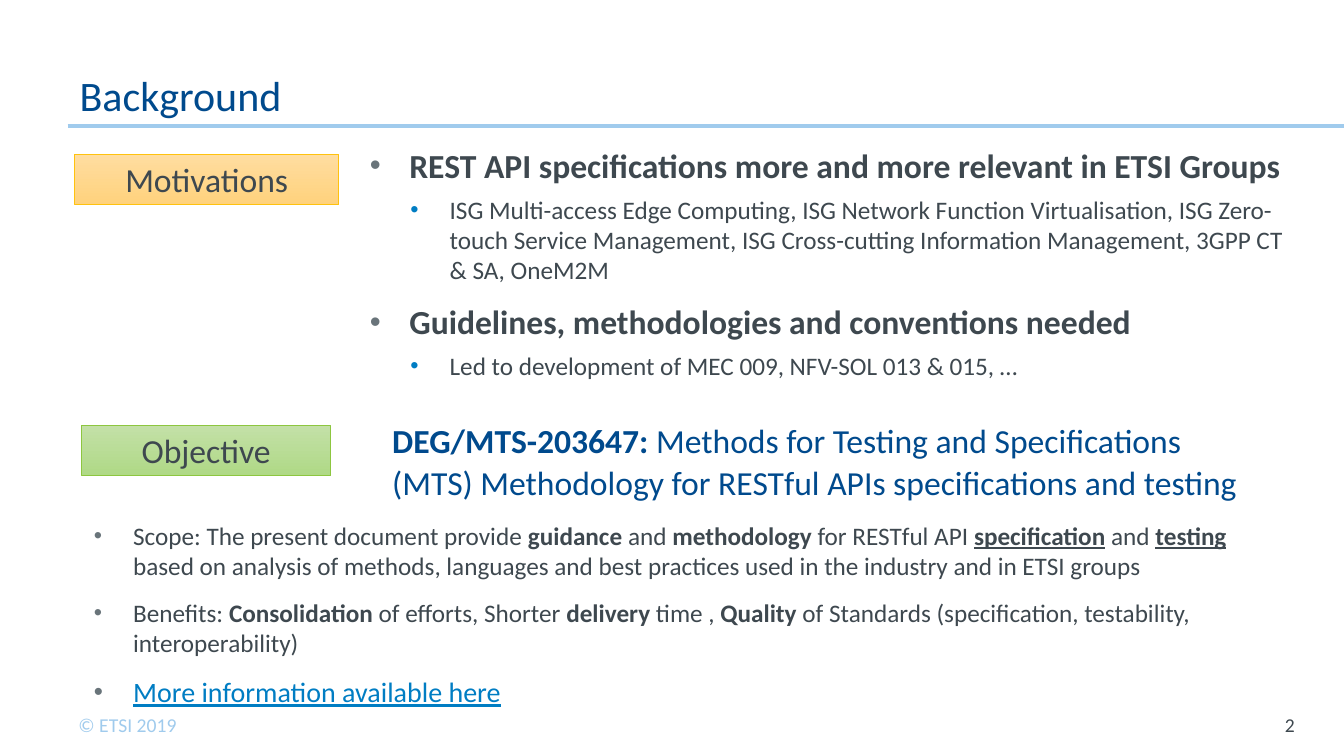
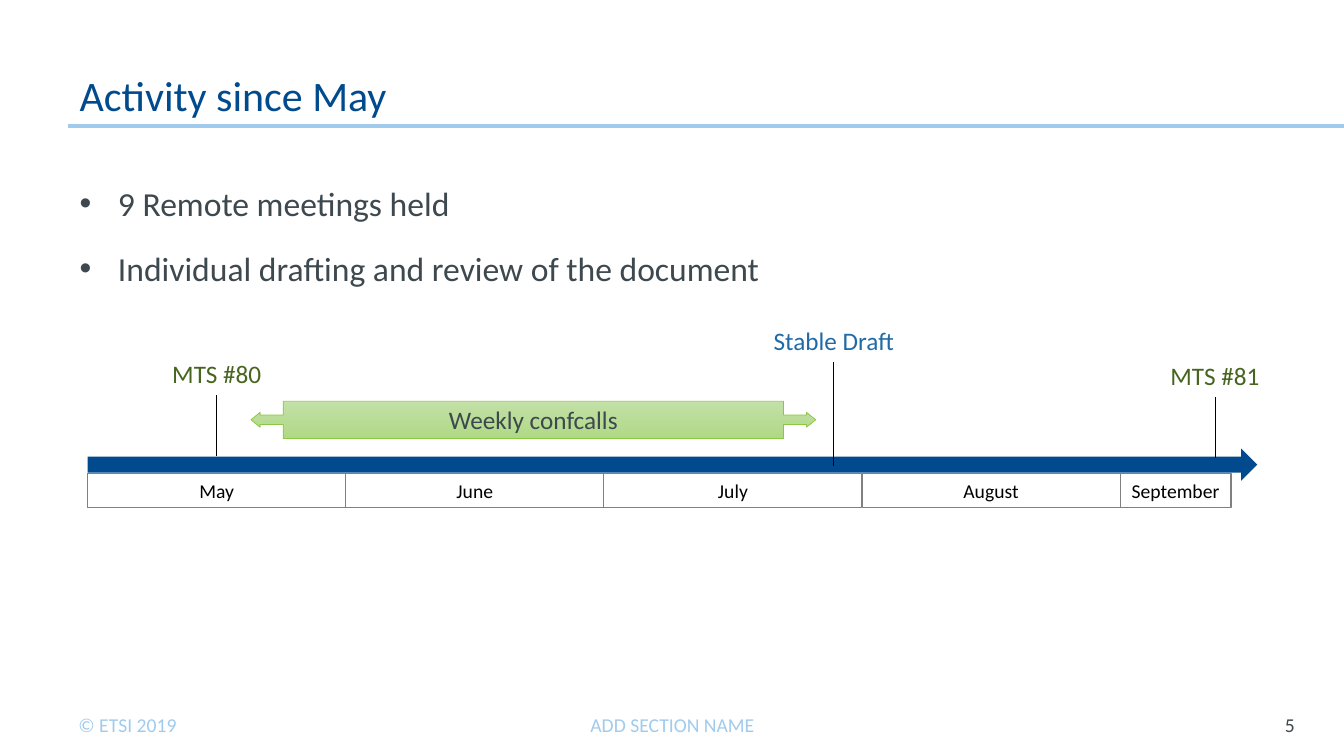
from lxml import etree
from pptx import Presentation
from pptx.dml.color import RGBColor
from pptx.enum.shapes import MSO_CONNECTOR as CONNECTOR, MSO_SHAPE as SHAPE
from pptx.enum.text import MSO_ANCHOR as ANCHOR, MSO_AUTO_SIZE as AUTO_SIZE, PP_ALIGN as ALIGN
from pptx.oxml.ns import qn
from pptx.util import Inches, Pt

COLORS = {
    "navy": "004A8D", "sky": "A0CBED", "text": "3E484F", "blue": "007DC3",
    "bullet": "69747A", "black": "000000", "grey": "808080",
    "draft": "206BA7", "meeting": "47651E",
    "green_top": "C3E0A7", "green_bottom": "AFD986", "green_line": "8DC640",
    "orange_top": "FFDDA0", "orange_bottom": "FFD27D", "orange_line": "FFC20E",
}
RGB = {name: RGBColor.from_string(value) for name, value in COLORS.items()}
FONT = "Calibri"
WIDE_INSETS = (0.12, 0.06, 0.12, 0.06)
BOLD = {"bold": True}
KEYWORD = {"bold": True, "underline": True}

# Paragraph styles: bullet is (left indent, hanging, colour, size in percent)
TOPIC = {"size": 24, "bold": True, "before": 12, "bullet": (0.39, 0.39, "bullet", 93)}
DETAIL = {"size": 18, "before": 6, "bullet": (0.79, 0.39, "blue", 93)}
POINT = {"size": 18, "before": 12, "bullet": (0.39, 0.39, "bullet", 93)}
LINK = {**POINT, "size": 20, "color": "blue", "underline": True}
ACTIVITY = {"size": 24, "before": 18, "bullet": (0.38, 0.38, "text", 100)}
HEADING = {"size": 24, "color": "navy", "line": 30}
TITLE = {"size": 30, "color": "navy", "line": 30}
FOOTER = {"size": 14, "color": "sky"}


def write(shape, paragraphs, anchor=ANCHOR.TOP, insets=(0.1, 0.05, 0.1, 0.05)):
    """Fill a shape with (style, runs) paragraphs; a run is (text, font changes)."""
    frame = shape.text_frame
    frame_format = {"word_wrap": True, "auto_size": AUTO_SIZE.NONE, "vertical_anchor": anchor}
    for side, inset in zip(("left", "top", "right", "bottom"), insets):
        frame_format[f"margin_{side}"] = Inches(inset)
    for name, value in frame_format.items():
        setattr(frame, name, value)

    for index, (style, runs) in enumerate(paragraphs):
        paragraph = frame.add_paragraph() if index else frame.paragraphs[0]
        if "bullet" in style:
            left, hanging, color, percent = style["bullet"]
            properties = paragraph._p.get_or_add_pPr()
            properties.set("marL", str(Inches(left)))
            properties.set("indent", str(-Inches(hanging)))
            bullet_color = etree.SubElement(properties, qn("a:buClr"))
            etree.SubElement(bullet_color, qn("a:srgbClr"), val=COLORS[color])
            etree.SubElement(properties, qn("a:buSzPct"), val=str(percent * 1000))
            etree.SubElement(properties, qn("a:buFont"), typeface="Arial")
            etree.SubElement(properties, qn("a:buChar"), char="•")
        paragraph.alignment = style.get("align", ALIGN.LEFT)
        paragraph.space_before = Pt(style.get("before", 0) if index else 0)
        if "line" in style:
            paragraph.line_spacing = Pt(style["line"])
        for text, changes in runs:
            run = paragraph.add_run()
            run.text = text
            run_format = {"name": FONT, "size": Pt(style["size"]),
                          "bold": style.get("bold", False),
                          "underline": style.get("underline", False), **changes}
            for name, value in run_format.items():
                setattr(run.font, name, value)
            run.font.color.rgb = RGB[style.get("color", "text")]


def add_line(slide, start, end, color, width):
    line = slide.shapes.add_connector(CONNECTOR.STRAIGHT, *map(Inches, start + end))
    line.line.color.rgb = RGB[color]
    line.line.width = Pt(width)
    etree.SubElement(line._element.spPr, qn("a:effectLst"))


presentation = Presentation()
presentation.slide_width = Inches(13.33)
presentation.slide_height = Inches(7.5)
title_only = presentation.slide_layouts[5]

# Title, rule and footer
slides = []
for title_text, number in (("Background", "2"), ("Activity since May", "5")):
    slide = presentation.slides.add_slide(title_only)
    title = slide.shapes.title
    for name, value in zip(("left", "top", "width", "height"), (0.67, 0.3, 10.42, 0.95)):
        setattr(title, name, Inches(value))
    write(title, [(TITLE, [(title_text, {})])], ANCHOR.BOTTOM, WIDE_INSETS)
    add_line(slide, (0.67, 1.25), (13.33, 1.25), "sky", 2.25)
    copyright_box = slide.shapes.add_textbox(*map(Inches, (0.68, 7.02, 1.34, 0.34)))
    write(copyright_box, [(FOOTER, [("© ETSI 2019", {})])])
    number_box = slide.shapes.add_textbox(*map(Inches, (12.25, 6.99, 0.69, 0.4)))
    number_style = {"size": 14, "align": ALIGN.RIGHT}
    write(number_box, [(number_style, [(number, {})])], ANCHOR.MIDDLE, (0, 0.05, 0.1, 0.05))
    slides.append(slide)
background, activity = slides

# Text blocks
motivations = [
    (TOPIC, [("REST API specifications more and more relevant in ETSI Groups", {})]),
    (DETAIL, [("ISG Multi-access Edge Computing, ISG Network Function Virtualisation, "
               "ISG Zero-touch Service Management, ISG Cross-cutting Information "
               "Management, 3GPP CT & SA, OneM2M", {})]),
    (TOPIC, [("Guidelines, methodologies and conventions needed", {})]),
    (DETAIL, [("Led to development of MEC 009, NFV-SOL 013 & 015, …", {})]),
]
objective = [
    (HEADING, [("DEG/MTS-203647: ", BOLD),
               ("Methods for Testing and Specifications (MTS) Methodology for RESTful "
                "APIs specifications and testing", {})]),
]
scope = [
    (POINT, [("Scope: The present document provide ", {}), ("guidance", BOLD),
             (" and ", {}), ("methodology", BOLD), (" for RESTful API ", {}),
             ("specification", KEYWORD), (" and ", {}), ("testing", KEYWORD),
             (" based on analysis of methods, languages and best practices used in "
              "the industry and in ETSI groups", {})]),
    (POINT, [("Benefits: ", {}), ("Consolidation", BOLD), (" of efforts, Shorter ", {}),
             ("delivery", BOLD), (" time , ", {}), ("Quality", BOLD),
             (" of Standards (specification, testability, interoperability)", {})]),
    (LINK, [("More information available here", {})]),
]
activities = [
    (ACTIVITY, [("9 Remote meetings held", {})]),
    (ACTIVITY, [("Individual drafting and review of the document", {})]),
]
section = [({**FOOTER, "align": ALIGN.CENTER}, [("ADD SECTION NAME", {})])]
for slide, place, paragraphs, anchor in (
    (background, (3.55, 1.38, 9.4, 2.64), motivations, ANCHOR.TOP),
    (background, (3.77, 4.1, 8.94, 0.94), objective, ANCHOR.BOTTOM),
    (background, (0.81, 5.1, 11.91, 1.97), scope, ANCHOR.TOP),
    (activity, (0.67, 1.75, 12.28, 1.3), activities, ANCHOR.TOP),
    (activity, (4.42, 6.99, 4.5, 0.4), section, ANCHOR.MIDDLE),
):
    text_box = slide.shapes.add_textbox(*map(Inches, place))
    write(text_box, paragraphs, anchor, WIDE_INSETS)

# Shaded labels
for slide, kind, place, hue, text, size in (
    (background, SHAPE.RECTANGLE, (0.74, 1.53, 2.62, 0.5), "orange", "Motivations", 24),
    (background, SHAPE.RECTANGLE, (0.81, 4.22, 2.47, 0.5), "green", "Objective", 24),
    (activity, SHAPE.LEFT_RIGHT_ARROW_CALLOUT, (2.49, 3.98, 5.6, 0.37), "green",
     "Weekly confcalls", 18),
):
    label = slide.shapes.add_shape(kind, *map(Inches, place))
    label.shadow.inherit = False
    label.fill.gradient()
    label.fill.gradient_angle = 270
    for stop, edge in zip(label.fill.gradient_stops, ("top", "bottom")):
        stop.color.rgb = RGB[f"{hue}_{edge}"]
    label.line.color.rgb = RGB[f"{hue}_line"]
    label.line.width = Pt(0.5)
    if kind == SHAPE.LEFT_RIGHT_ARROW_CALLOUT:
        for index, adjustment in enumerate((0.25, 0.196, 0.242, 0.886)):
            label.adjustments[index] = adjustment
    write(label, [({"size": size, "align": ALIGN.CENTER}, [(text, {})])], ANCHOR.MIDDLE)

# Timeline
time_arrow = activity.shapes.add_shape(
    SHAPE.RIGHT_ARROW, *map(Inches, (0.87, 4.45, 11.6, 0.32)))
time_arrow.shadow.inherit = False
time_arrow.fill.solid()
time_arrow.fill.fore_color.rgb = RGB["navy"]
time_arrow.line.fill.background()

MONTH_WIDTH = 2.56
month_style = {"size": 14, "color": "black", "align": ALIGN.CENTER}
for index, month in enumerate(("May", "June", "July", "August", "September")):
    width = 1.1 if month == "September" else MONTH_WIDTH
    month_box = activity.shapes.add_shape(
        SHAPE.RECTANGLE, *map(Inches, (0.87 + index * MONTH_WIDTH, 4.7, width, 0.34)))
    month_box.shadow.inherit = False
    month_box.fill.background()
    month_box.line.color.rgb = RGB["grey"]
    month_box.line.width = Pt(0.75)
    write(month_box, [(month_style, [(month, {})])])

for text, center, top, width, line_end, color in (
    ("MTS #80", 2.15, 3.51, 1.19, 4.52, "meeting"),
    ("Stable Draft", 8.27, 3.18, 1.86, 4.62, "draft"),
    ("MTS #81", 12.05, 3.53, 1.19, 4.54, "meeting"),
):
    add_line(activity, (center, top + 0.41), (center, line_end), "black", 0.5)
    milestone = activity.shapes.add_textbox(
        *map(Inches, (center - width / 2, top, width, 0.4)))
    milestone_style = {"size": 18, "color": color, "align": ALIGN.CENTER}
    write(milestone, [(milestone_style, [(text, {})])])

presentation.save("out.pptx")
